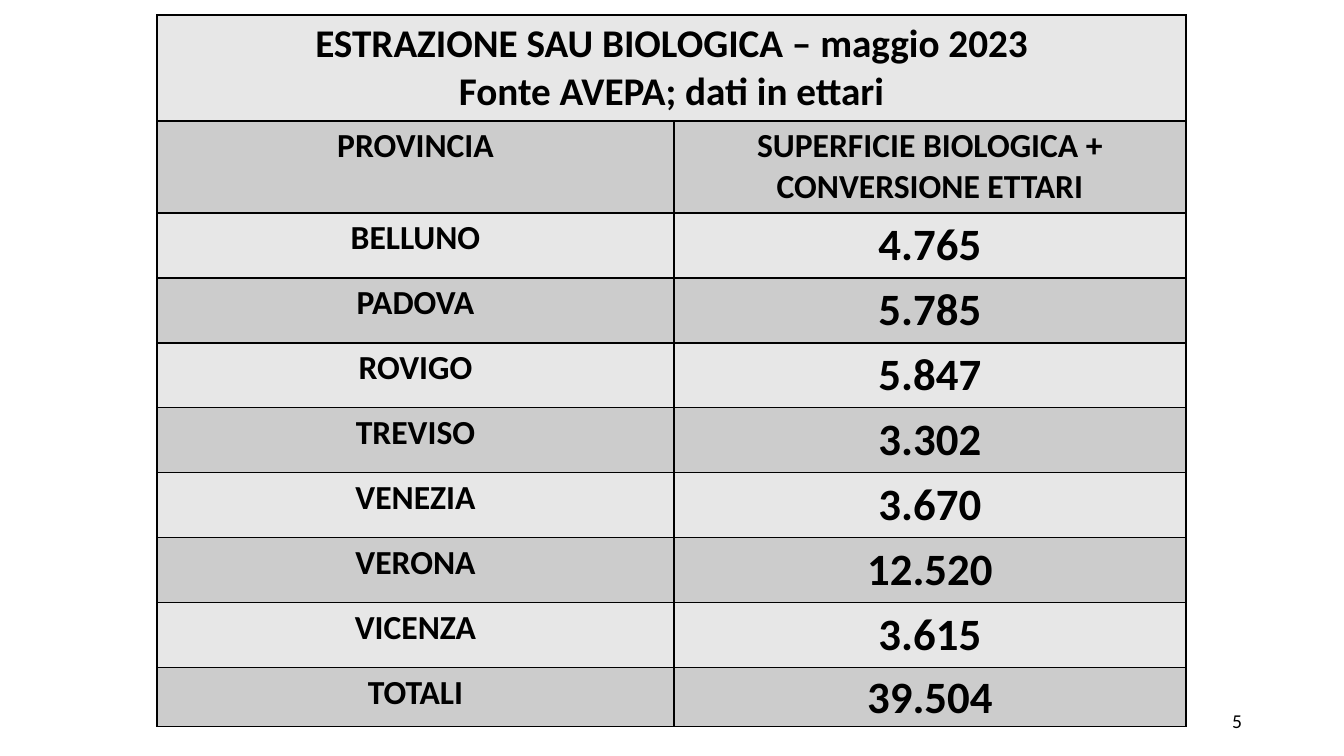
from lxml import etree
from pptx import Presentation
from pptx.dml.color import RGBColor
from pptx.enum.text import MSO_ANCHOR, PP_ALIGN
from pptx.oxml.ns import qn
from pptx.util import Pt

CENTER, RIGHT = PP_ALIGN.CENTER, PP_ALIGN.RIGHT
TOP, MIDDLE = MSO_ANCHOR.TOP, MSO_ANCHOR.MIDDLE
FONT = "Calibri"
COLORS = {"text": "000000", "border": "000000", "light": "E7E7E7", "dark": "CCCCCC"}
BORDER_WIDTH = Pt(1)

HEADING = ["ESTRAZIONE SAU BIOLOGICA – maggio 2023", "Fonte AVEPA; dati in ettari"]
COLUMN_HEADERS = ["PROVINCIA", "SUPERFICIE BIOLOGICA + CONVERSIONE ETTARI"]
HECTARES = [
    ("BELLUNO", "4.765"),
    ("PADOVA", "5.785"),
    ("ROVIGO", "5.847"),
    ("TREVISO", "3.302"),
    ("VENEZIA", "3.670"),
    ("VERONA", "12.520"),
    ("VICENZA", "3.615"),
    ("TOTALI", "39.504"),
]
COLUMN_WIDTHS = [517, 512]
ROW_HEIGHTS = [106, 92] + [65] * 7 + [59]


def px(length):
    return round(length * 914400 / 100.8)


def write_lines(frame, lines, size, bold, alignment):
    for index, line in enumerate(lines):
        paragraph = frame.paragraphs[0] if index == 0 else frame.add_paragraph()
        paragraph.alignment = alignment
        run = paragraph.add_run()
        run.text = line
        run.font.name = FONT
        run.font.size = Pt(size)
        run.font.bold = bold
        run.font.color.rgb = RGBColor.from_string(COLORS["text"])


def add_borders(cell):
    properties = cell._tc.get_or_add_tcPr()
    for side in ("a:lnL", "a:lnR", "a:lnT", "a:lnB"):
        line = etree.SubElement(properties, qn(side), w=str(BORDER_WIDTH))
        fill = etree.SubElement(line, qn("a:solidFill"))
        etree.SubElement(fill, qn("a:srgbClr"), val=COLORS["border"])


def style_cell(cell, color):
    add_borders(cell)
    cell.fill.solid()
    cell.fill.fore_color.rgb = RGBColor.from_string(COLORS[color])
    cell.vertical_anchor = TOP


def add_hectares_table(slide):
    shape = slide.shapes.add_table(
        len(ROW_HEIGHTS), len(COLUMN_WIDTHS), px(157), px(15),
        px(sum(COLUMN_WIDTHS)), px(sum(ROW_HEIGHTS)))
    table = shape.table
    for column, width in zip(table.columns, COLUMN_WIDTHS):
        column.width = px(width)
    for index, height in enumerate(ROW_HEIGHTS):
        table.rows[index].height = px(height)
        for cell in table.rows[index].cells:
            style_cell(cell, "dark" if index % 2 else "light")

    table.cell(0, 0).merge(table.cell(0, 1))
    write_lines(table.cell(0, 0).text_frame, HEADING, 28, True, CENTER)
    for column, header in enumerate(COLUMN_HEADERS):
        write_lines(table.cell(1, column).text_frame, [header], 24, True, CENTER)
    for row, (province, hectares) in enumerate(HECTARES, start=2):
        write_lines(table.cell(row, 0).text_frame, [province], 24, True, CENTER)
        write_lines(table.cell(row, 1).text_frame, [hectares], 32, True, CENTER)

    total = table.cell(len(ROW_HEIGHTS) - 1, 1)
    total.vertical_anchor = MIDDLE
    total.margin_left = total.margin_right = total.margin_top = px(1)
    total.margin_bottom = 0


def add_page_number(slide, number):
    box = slide.shapes.add_textbox(px(950), px(701), px(302), px(40))
    frame = box.text_frame
    frame.word_wrap = True
    frame.vertical_anchor = MIDDLE
    write_lines(frame, [number], 14, False, RIGHT)


def main():
    presentation = Presentation()
    presentation.slide_width = px(1344)
    presentation.slide_height = px(756)
    slide = presentation.slides.add_slide(presentation.slide_layouts[6])
    add_page_number(slide, "5")
    add_hectares_table(slide)
    presentation.save("out.pptx")


if __name__ == "__main__":
    main()
